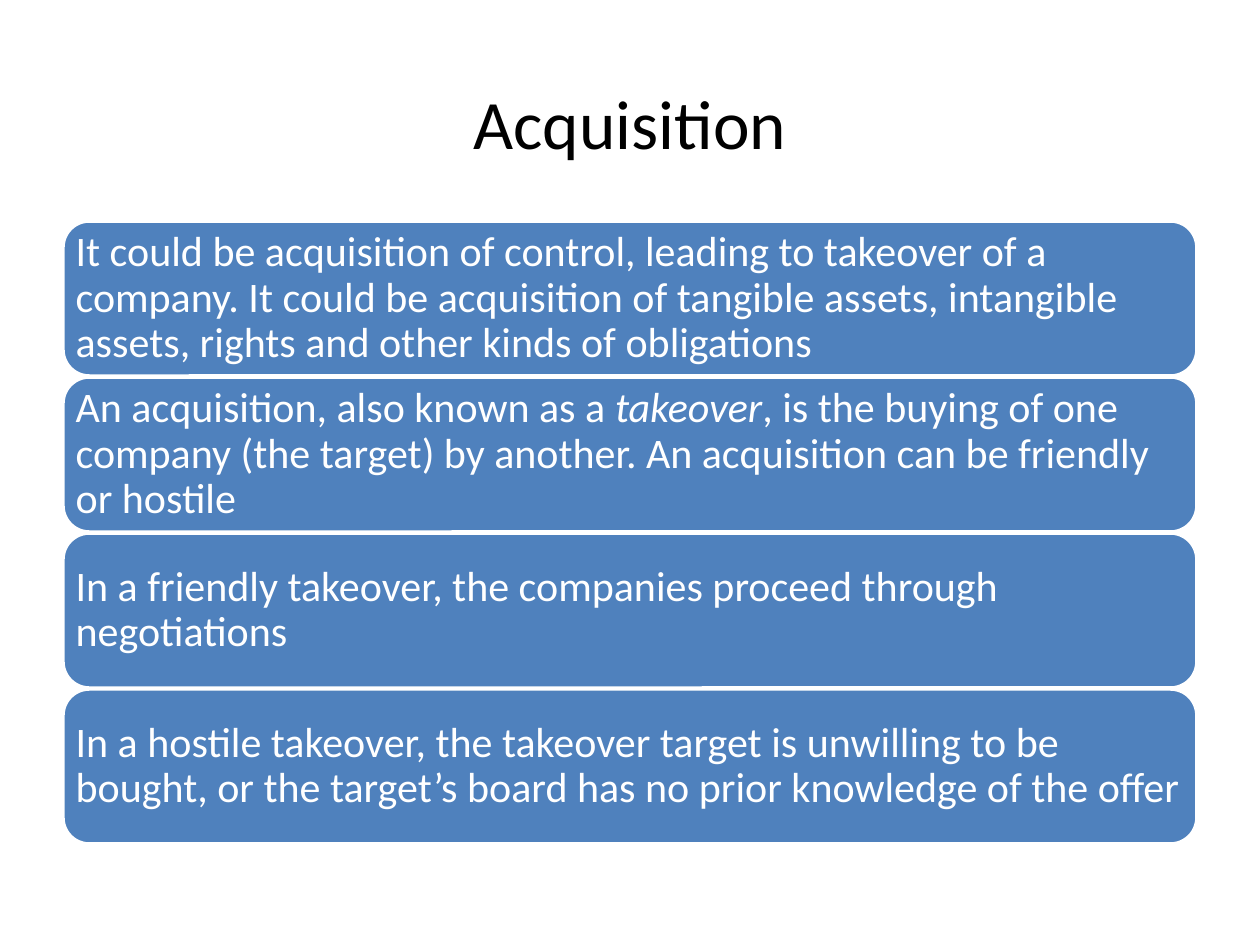
from dataclasses import dataclass

from pptx import Presentation
from pptx.dml.color import RGBColor
from pptx.enum.shapes import MSO_SHAPE as Preset
from pptx.enum.text import MSO_ANCHOR as Anchor, PP_ALIGN as Align
from pptx.shapes.autoshape import Shape
from pptx.slide import Slide
from pptx.util import Emu, Pt

PX_PER_INCH = 126
COLORS = {"title": "000000", "panel": "4F81BD", "white": "FFFFFF"}
PANEL_LEFT, PANEL_TOP, PANEL_WIDTH, PANEL_HEIGHT = 63, 221, 1134, 155
PANEL_PITCH = 156


@dataclass(frozen=True)
class Phrase:
    text: str
    italic: bool = False


@dataclass(frozen=True)
class Statement:
    phrases: tuple[Phrase, ...]


STATEMENTS = (
    Statement((Phrase(
        "It could be acquisition of control, leading to takeover of a company. "
        "It could be acquisition of tangible assets, intangible assets, rights "
        "and other kinds of obligations"),)),
    Statement((
        Phrase("An acquisition, also known as a "),
        Phrase("takeover", italic=True),
        Phrase(", is the buying of one company (the target) by another. "
               "An acquisition can be friendly or hostile"))),
    Statement((Phrase(
        "In a friendly takeover, the companies proceed through negotiations"),)),
    Statement((Phrase(
        "In a hostile takeover, the takeover target is unwilling to be bought, "
        "or the target’s board has no prior knowledge of the offer"),)),
)


def px(length: int) -> Emu:
    return Emu(round(length * 914400 / PX_PER_INCH))


def color(name: str) -> RGBColor:
    return RGBColor.from_string(COLORS[name])


def write(holder: Shape, phrases: tuple[Phrase, ...], *, size: float, ink: str,
          align: Align, insets: tuple[int, int, int, int],
          spacing: float = 1.0) -> None:
    frame = holder.text_frame
    frame.word_wrap = True
    frame.vertical_anchor = Anchor.MIDDLE
    (frame.margin_left, frame.margin_top,
     frame.margin_right, frame.margin_bottom) = map(px, insets)
    paragraph = frame.paragraphs[0]
    paragraph.alignment = align
    paragraph.line_spacing = spacing
    for phrase in phrases:
        run = paragraph.add_run()
        run.text = phrase.text
        run.font.name = "Calibri"
        run.font.size = Pt(size)
        run.font.italic = phrase.italic
        run.font.color.rgb = color(ink)


def draw_heading(slide: Slide, text: str) -> None:
    heading = slide.shapes.add_textbox(px(63), px(38), px(1134), px(158))
    write(heading, (Phrase(text),), size=39.6, ink="title",
          align=Align.CENTER, insets=(13, 15, 13, 6))


def draw_panel(slide: Slide, statement: Statement, top: int) -> None:
    panel = slide.shapes.add_shape(Preset.ROUNDED_RECTANGLE, px(PANEL_LEFT),
                                   px(top), px(PANEL_WIDTH), px(PANEL_HEIGHT))
    panel.adjustments[0] = 0.17
    panel.shadow.inherit = False
    panel.fill.solid()
    panel.fill.fore_color.rgb = color("panel")
    panel.line.color.rgb = color("white")
    panel.line.width = Pt(2)
    write(panel, statement.phrases, size=24, ink="white", align=Align.LEFT,
          insets=(5, 5, 5, 5), spacing=0.9)


def main() -> None:
    deck = Presentation()
    deck.slide_width, deck.slide_height = px(1260), px(945)
    slide = deck.slides.add_slide(deck.slide_layouts[6])
    draw_heading(slide, "Acquisition")
    for row, statement in enumerate(STATEMENTS):
        draw_panel(slide, statement, PANEL_TOP + row * PANEL_PITCH)
    deck.save("out.pptx")


if __name__ == "__main__":
    main()
